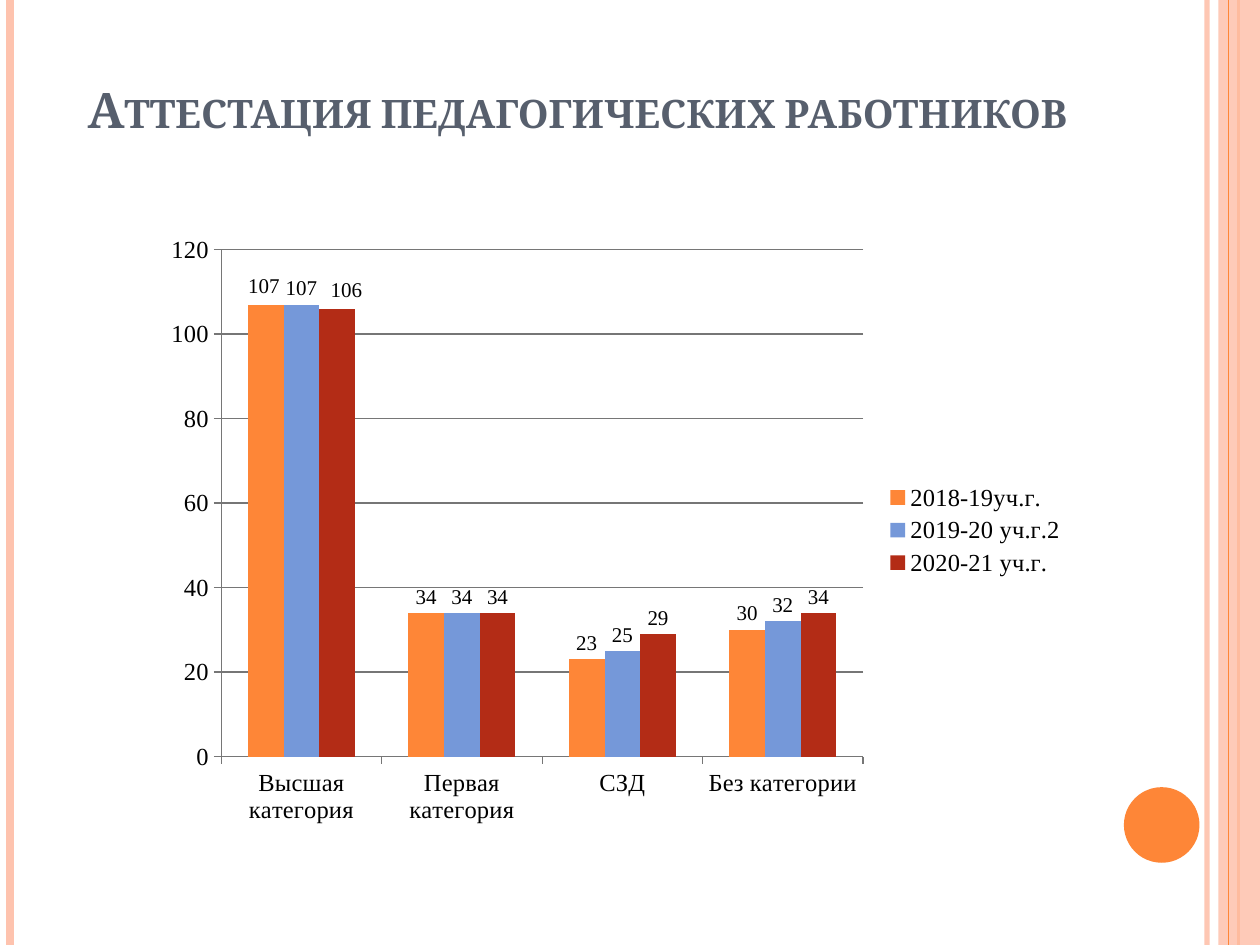
from collections import namedtuple

from lxml.etree import SubElement
from pptx import Presentation
from pptx.chart.data import CategoryChartData
from pptx.dml.color import RGBColor
from pptx.enum.chart import XL_CHART_TYPE, XL_LABEL_POSITION, XL_LEGEND_POSITION, XL_TICK_MARK
from pptx.enum.shapes import MSO_CONNECTOR, MSO_SHAPE
from pptx.enum.text import MSO_ANCHOR, PP_ALIGN
from pptx.oxml import parse_xml
from pptx.oxml.ns import nsdecls, qn
from pptx.util import Inches, Pt

Box = namedtuple("Box", "left top width height")
SLIDE = Box(0, 0, Inches(10), Inches(7.5))
ORANGE, PEACH, SLATE, GRAY = "FE8637", "FEC3AE", "575F6D", "767676"
CATEGORIES = ["Высшая категория", "Первая категория", "СЗД", "Без категории"]
YEARS = [
    ("2018-19уч.г.", (107, 34, 23, 30), ORANGE, (-0.002, -0.004)),
    ("2019-20 уч.г.2", (107, 34, 25, 32), "7598D9", None),
    ("2020-21 уч.г.", (106, 34, 29, 34), "B32C16", (0.01, -0.004)),
]


def color(code):
    return RGBColor.from_string(code)


def share(box, left, top, width, height):
    return Box(
        int(box.left + box.width * left),
        int(box.top + box.height * top),
        int(box.width * width),
        int(box.height * height),
    )


def set_alpha(fill_parent, percent):
    rgb = fill_parent.find(".//" + qn("a:srgbClr"))
    SubElement(rgb, qn("a:alpha")).set("val", str(percent * 1000))


def add_stripe(slide, box, column, code, weight, opacity=100):
    x = int(box.left + box.width * column)
    stripe = slide.shapes.add_connector(
        MSO_CONNECTOR.STRAIGHT, x, box.top, x, box.top + box.height
    )
    stripe.line.color.rgb = color(code)
    stripe.line.width = Pt(weight)
    properties = stripe._element.spPr
    if opacity < 100:
        set_alpha(properties, opacity)
    SubElement(properties, qn("a:effectLst"))


def add_solid(slide, kind, box, code, opacity=100):
    solid = slide.shapes.add_shape(kind, *box)
    solid.shadow.inherit = False
    solid.fill.solid()
    solid.fill.fore_color.rgb = color(code)
    solid.line.fill.background()
    if opacity < 100:
        set_alpha(solid._element.spPr, opacity)


def add_frame(slide, box):
    add_stripe(slide, box, 0.958, PEACH, 3, 93)
    add_stripe(slide, box, 0.008, PEACH, 4.5)
    add_stripe(slide, box, 0.983, ORANGE, 1.5)
    add_solid(slide, MSO_SHAPE.RECTANGLE, share(box, 0.967, 0, 0.033, 1), PEACH, 87)
    add_stripe(slide, box, 0.975, ORANGE, 0.75)
    add_solid(slide, MSO_SHAPE.OVAL, share(box, 0.892, 0.833, 0.06, 0.08), ORANGE)


def add_heading(slide, box):
    frame = slide.shapes.add_textbox(*box).text_frame
    frame.word_wrap = True
    frame.vertical_anchor = MSO_ANCHOR.BOTTOM
    paragraph = frame.paragraphs[0]
    paragraph.alignment = PP_ALIGN.CENTER
    run = paragraph.add_run()
    run.text = "Аттестация педагогических работников"
    run.font.name = "Cambria"
    run.font.size = Pt(28)
    run.font.bold = True
    run.font.color.rgb = color(SLATE)
    run.font._element.set("cap", "small")


def manual_layout(**settings):
    parts = "".join(f'<c:{key} val="{value}"/>' for key, value in settings.items())
    return parse_xml(
        f'<c:layout {nsdecls("c")}><c:manualLayout>{parts}</c:manualLayout></c:layout>'
    )


def place_plot(chart):
    area = chart._chartSpace.chart.plotArea
    for layout in area.findall(qn("c:layout")):
        area.remove(layout)
    area.insert(0, manual_layout(
        layoutTarget="inner", xMode="edge", yMode="edge",
        x=0.073, y=0.042, w=0.694, h=0.828,
    ))


def style_axes(chart):
    for axis in (chart.category_axis, chart.value_axis):
        axis.major_tick_mark = XL_TICK_MARK.OUTSIDE
        axis.minor_tick_mark = XL_TICK_MARK.NONE
        axis.format.line.color.rgb = color(GRAY)
        axis.format.line.width = Pt(0.75)
    values = chart.value_axis
    values.minimum_scale, values.maximum_scale, values.major_unit = 0, 120, 20
    values.has_major_gridlines = True
    values.major_gridlines.format.line.color.rgb = color(GRAY)
    values.major_gridlines.format.line.width = Pt(0.75)


def style_year(series, code, first_label_shift):
    series.format.fill.solid()
    series.format.fill.fore_color.rgb = color(code)
    series.smooth = False if hasattr(series, "smooth") else None
    labels = series.data_labels
    labels.show_value = True
    labels.position = XL_LABEL_POSITION.OUTSIDE_END
    labels.font.size = Pt(12)
    if first_label_shift:
        label = series.points[0].data_label
        label.font.size = Pt(12)
        label.position = XL_LABEL_POSITION.OUTSIDE_END
        x, y = first_label_shift
        index = labels._element.find(qn("c:dLbl")).find(qn("c:idx"))
        index.addnext(manual_layout(x=x, y=y))


def add_staff_chart(slide, box):
    data = CategoryChartData()
    data.categories = CATEGORIES
    for name, counts, _, _ in YEARS:
        data.add_series(name, counts)
    chart = slide.shapes.add_chart(XL_CHART_TYPE.COLUMN_CLUSTERED, *box, data).chart
    chart.has_title = False
    chart.font.name = "Times New Roman"
    chart.font.size = Pt(14)
    chart.font.color.rgb = color("000000")
    chart.has_legend = True
    chart.legend.position = XL_LEGEND_POSITION.RIGHT
    chart.legend.include_in_layout = False
    plot = chart.plots[0]
    plot.vary_by_categories = False
    plot.gap_width, plot.overlap = 150, 0
    place_plot(chart)
    style_axes(chart)
    for series, (_, _, code, shift) in zip(plot.series, YEARS):
        style_year(series, code, shift)


def main():
    deck = Presentation()
    deck.slide_width, deck.slide_height = SLIDE.width, SLIDE.height
    slide = deck.slides.add_slide(deck.slide_layouts[6])
    slide.background.fill.solid()
    slide.background.fill.fore_color.rgb = color("FFFFFF")
    add_frame(slide, SLIDE)
    add_heading(slide, share(SLIDE, 0.05, 0.04, 0.817, 0.113))
    add_staff_chart(slide, share(SLIDE, 0.122, 0.237, 0.734, 0.648))
    deck.save("out.pptx")


if __name__ == "__main__":
    main()
